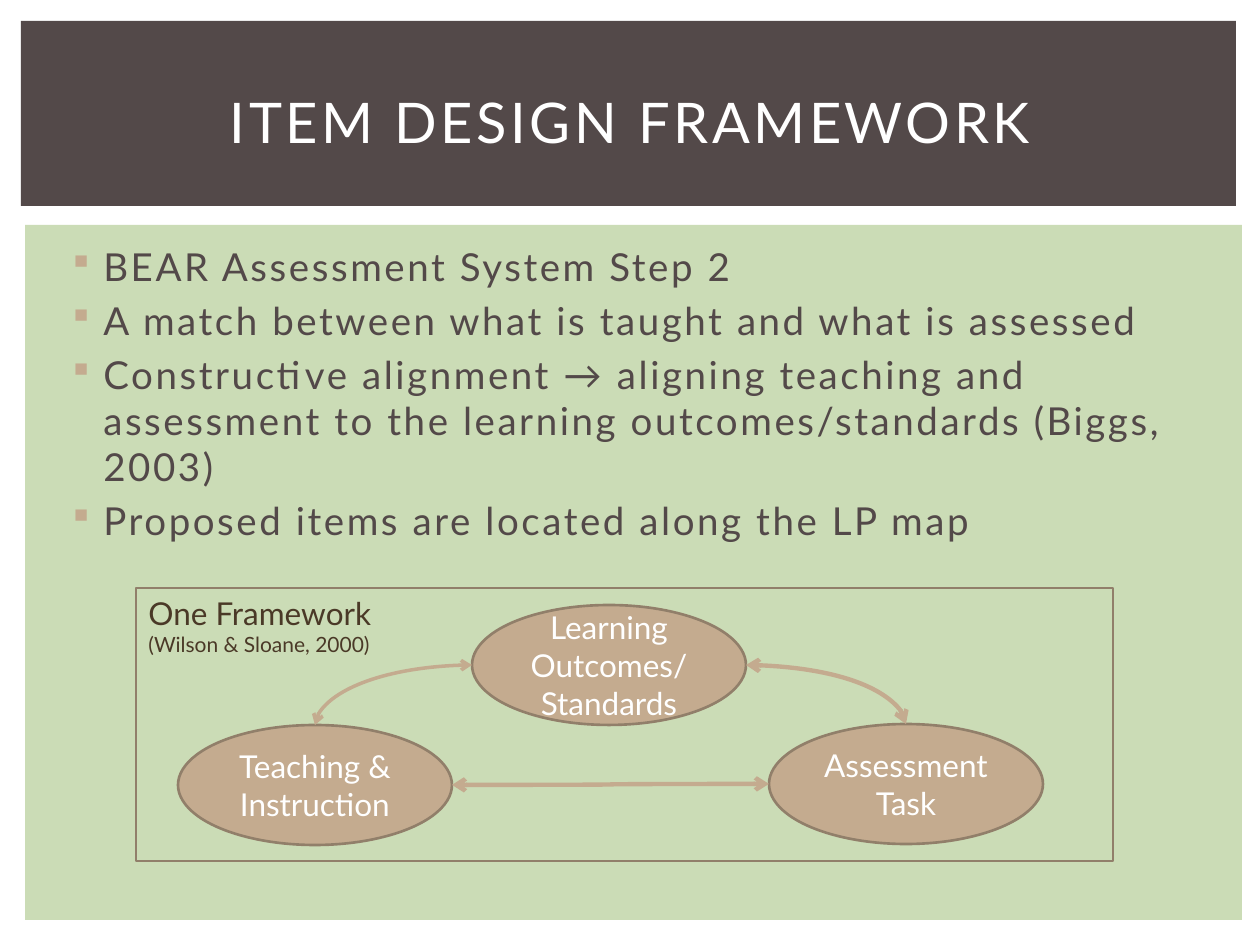
from dataclasses import dataclass
from typing import NamedTuple

from lxml import etree
from pptx import Presentation
from pptx.dml.color import RGBColor
from pptx.enum.shapes import MSO_CONNECTOR, MSO_SHAPE
from pptx.enum.text import MSO_ANCHOR, MSO_AUTO_SIZE, PP_ALIGN
from pptx.oxml.ns import qn
from pptx.util import Emu, Pt

RECT, OVAL = MSO_SHAPE.RECTANGLE, MSO_SHAPE.OVAL
CURVE = MSO_CONNECTOR.CURVE
MIDDLE, TOP = MSO_ANCHOR.MIDDLE, MSO_ANCHOR.TOP
LEFT, CENTER = PP_ALIGN.LEFT, PP_ALIGN.CENTER
SCALE = 914400 / 126


@dataclass(frozen=True)
class Theme:
    font: str = "Lato"
    dark: str = "534949"
    green: str = "CBDCB6"
    tan: str = "C4AB8F"
    edge: str = "917F6A"
    brown: str = "4A3927"
    white: str = "FFFFFF"
    title: int = 32
    body: int = 22
    label: int = 18
    cite: int = 12


class Box(NamedTuple):
    x: int
    y: int
    w: int
    h: int


class Node(NamedTuple):
    text: str
    x: int
    y: int


class Arc(NamedTuple):
    x1: int
    y1: int
    x2: int
    y2: int
    form: str
    width: float


THEME = Theme()
OVAL_W, OVAL_H = 274, 120
GOAL = Node("Learning Outcomes/Standards", 472, 605)
TASK = Node("Assessment Task", 769, 724)
TEACH = Node("Teaching & Instruction", 178, 725)
MID_X, MID_Y = OVAL_W // 2, OVAL_H // 2
ARCS = [
    Arc(GOAL.x, GOAL.y + MID_Y, TEACH.x + MID_X, TEACH.y,
        "curvedConnector2", 2),
    Arc(TEACH.x + OVAL_W, TEACH.y + MID_Y, TASK.x, TASK.y + MID_Y,
        "curvedConnector3", 2.5),
    Arc(GOAL.x + OVAL_W, GOAL.y + MID_Y, TASK.x + MID_X, TASK.y,
        "curvedConnector2", 2.5),
]
POINTS = [
    "BEAR Assessment System Step 2",
    "A match between what is taught and what is assessed",
    "Constructive alignment → aligning teaching and assessment to the "
    "learning outcomes/standards (Biggs, 2003)",
    "Proposed items are located along the LP map",
]


def px(n: float) -> Emu:
    return Emu(round(n * SCALE))


def rgb(code: str) -> RGBColor:
    return RGBColor.from_string(code)


def place(shape, box: Box) -> None:
    shape.left, shape.top, shape.width, shape.height = map(px, box)


def style(para, size: int, color: str, align=LEFT, space: int = 0) -> None:
    """Set the font, alignment and letter spacing of a paragraph."""
    para.alignment = align
    font = para.font
    font.name, font.size = THEME.font, Pt(size)
    font.color.rgb = rgb(color)
    if space:
        for run in para.runs:
            run._r.get_or_add_rPr().set("spc", str(space))


def bullet(para) -> None:
    """Give a paragraph a hanging square bullet."""
    props = para._p.get_or_add_pPr()
    props.set("marL", str(px(38)))
    props.set("indent", str(-px(31)))
    tint = etree.SubElement(props, qn("a:buClr"))
    etree.SubElement(tint, qn("a:srgbClr"), val=THEME.tan)
    etree.SubElement(props, qn("a:buFont"), typeface="Wingdings")
    etree.SubElement(props, qn("a:buChar"), char="§")


def draw(slide, kind, box: Box, fill: str = "", line: str = ""):
    shape = slide.shapes.add_shape(kind, *map(px, box))
    shape.shadow.inherit = False
    if fill:
        shape.fill.solid()
        shape.fill.fore_color.rgb = rgb(fill)
    else:
        shape.fill.background()
    if line:
        shape.line.color.rgb = rgb(line)
        shape.line.width = Pt(1.5)
    else:
        shape.line.fill.background()
    return shape


def oval(slide, node: Node) -> None:
    box = Box(node.x, node.y, OVAL_W, OVAL_H)
    shape = draw(slide, OVAL, box, THEME.tan, THEME.edge)
    frame = shape.text_frame
    frame.word_wrap, frame.vertical_anchor = True, MIDDLE
    frame.text = node.text
    style(frame.paragraphs[0], THEME.label, THEME.white, CENTER)


def link(slide, arc: Arc) -> None:
    """Draw a curve with an arrowhead at both ends."""
    ends = map(px, (arc.x1, arc.y1, arc.x2, arc.y2))
    curve = slide.shapes.add_connector(CURVE, *ends)
    curve.line.color.rgb = rgb(THEME.tan)
    curve.line.width = Pt(arc.width)
    props = curve._element.spPr
    props.find(qn("a:prstGeom")).set("prst", arc.form)
    for tag in ("a:headEnd", "a:tailEnd"):
        etree.SubElement(curve.line._get_or_add_ln(), qn(tag), type="arrow")
    etree.SubElement(props, qn("a:effectLst"))


def main() -> None:
    deck = Presentation()
    deck.slide_width, deck.slide_height = px(1260), px(945)
    slide = deck.slides.add_slide(deck.slide_layouts[5])

    # Panels, behind the title
    panels = [
        draw(slide, RECT, Box(25, 225, 1217, 695), THEME.green),
        draw(slide, RECT, Box(21, 21, 1215, 185), THEME.dark),
    ]
    title = slide.shapes.title
    for panel in panels:
        title._element.addprevious(panel._element)

    # Title
    place(title, Box(53, 49, 1155, 145))
    frame = title.text_frame
    frame.text = "ITEM DESIGN FRAMEWORK"
    frame.word_wrap, frame.vertical_anchor = True, MIDDLE
    frame.auto_size = MSO_AUTO_SIZE.NONE
    style(frame.paragraphs[0], THEME.title, THEME.white, CENTER, 200)

    # Bullet points
    body = slide.shapes.add_textbox(*map(px, (53, 237, 1158, 607)))
    frame = body.text_frame
    frame.word_wrap = True
    frame.text = "\n".join(POINTS)
    for i, para in enumerate(frame.paragraphs):
        bullet(para)
        if i:
            para.space_before = Pt(4.4)
        style(para, THEME.body, THEME.dark, space=150)

    # Framework diagram
    for node in (GOAL, TASK, TEACH):
        oval(slide, node)
    for arc in ARCS:
        link(slide, arc)
    border = draw(slide, RECT, Box(136, 588, 977, 273), line=THEME.edge)
    frame = border.text_frame
    frame.word_wrap, frame.vertical_anchor = True, TOP
    frame.text = "One Framework\n(Wilson & Sloane, 2000)"
    for para, size in zip(frame.paragraphs, (THEME.label, THEME.cite)):
        style(para, size, THEME.brown)

    deck.save("out.pptx")


if __name__ == "__main__":
    main()
